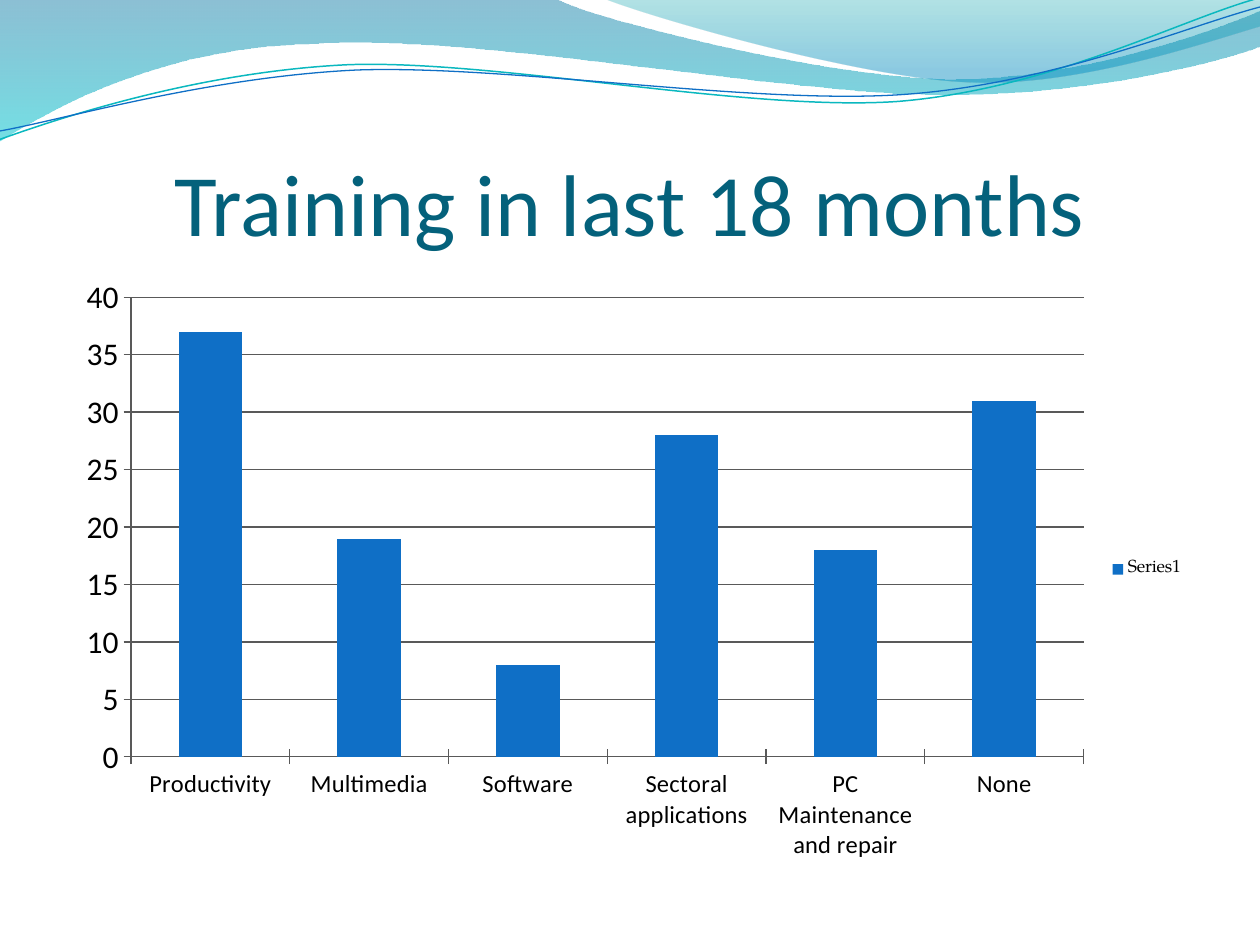
"""Build a slide with a column chart of training in the last 18 months."""
from lxml import etree
from pptx import Presentation
from pptx.chart.data import CategoryChartData
from pptx.dml.color import RGBColor
from pptx.enum.chart import XL_CHART_TYPE, XL_LEGEND_POSITION, XL_TICK_MARK
from pptx.enum.text import MSO_ANCHOR, PP_ALIGN
from pptx.oxml import parse_xml
from pptx.oxml.ns import nsdecls, qn
from pptx.util import Pt

COLUMN = XL_CHART_TYPE.COLUMN_CLUSTERED
LEGEND_RIGHT = XL_LEGEND_POSITION.RIGHT
TICK_CROSS = XL_TICK_MARK.CROSS
BOTTOM = MSO_ANCHOR.BOTTOM
CENTER = PP_ALIGN.CENTER

COLORS = {
    "title": "04617B", "text": "000000", "bar": "0F6FC6", "axis": "595959",
    "deep": "0074A1", "aqua": "00C6CF", "teal": "00A1A9", "sky": "008BBF",
    "teal line": "0AB8BF", "blue line": "0F6FC6",
}
BODY_FONT, CHART_FONT = "Calibri", "TeX Gyre Pagella"

TITLE = "Training in last 18 months"
TRAINING = [
    ("Productivity", 37), ("Multimedia", 19), ("Software", 8),
    ("Sectoral applications", 28), ("PC Maintenance and repair", 18), ("None", 31),
]
PLOT_LAYOUT = {"x": 0.06, "y": 0.05, "w": 0.84, "h": 0.76}

BANDS = [
    {"start": (0, 0),
     "segments": [[(317, -1)],
                  [(343, 12), (478, 45), (546, 45)], [(614, 45), (690, 19), (720, 6)],
                  [(721, 26)],
                  [(708, 32), (626, 55), (537, 54)], [(448, 54), (275, 20), (185, 24.5)],
                  [(93, 26), (33, 60), (-1, 81)]],
     "stops": [(0, "deep", 45), (1, "aqua", 55)]},
    {"start": (345, -1),
     "segments": [[(366, 8), (491, 45), (554, 47)], [(616, 50), (692, 23), (720, 15)],
                  [(720, 0)]],
     "stops": [(0, "teal", 30), (0.8, "sky", 45)]},
]
WAVES = [
    {"start": (-1, 80),
     "segments": [[(35, 67), (114, 41), (199, 37)], [(284, 34), (427, 64), (513, 58)],
                  [(600, 51), (675, 11), (719, -1)]],
     "color": "teal line", "width": 0.85},
    {"start": (-1, 75),
     "segments": [[(34, 69), (118, 44), (204, 40)], [(290, 37), (430, 60), (516, 54)],
                  [(602, 48), (678, 15), (720, 4)]],
     "color": "blue line", "width": 0.75},
]


def rgb(name):
    return RGBColor.from_string(COLORS[name])


def add_outline(slide, start, segments, close):
    points = [(Pt(x), Pt(y)) for segment in segments for x, y in segment]
    builder = slide.shapes.build_freeform(Pt(start[0]), Pt(start[1]))
    builder.add_line_segments(points, close=close)
    shape = builder.convert_to_shape()
    shape.shadow.inherit = False
    lines = iter(list(shape.element.iter(qn("a:lnTo"))))
    for segment in segments:
        steps = [next(lines) for point in segment]
        if len(steps) == 3:
            curve = etree.Element(qn("a:cubicBezTo"))
            steps[0].addprevious(curve)
            for step in steps:
                curve.append(step[0])
                step.getparent().remove(step)
    return shape


def add_band(slide, start, segments, stops):
    shape = add_outline(slide, start, segments, True)
    shape.line.fill.background()
    shape.fill.gradient()
    shape.fill.gradient_angle = 270
    for stop, (position, color, opacity) in zip(shape.fill.gradient_stops, stops):
        stop.position = position
        stop.color.rgb = rgb(color)
    colors = shape.element.spPr.iter(qn("a:srgbClr"))
    for element, (position, color, opacity) in zip(list(colors), stops):
        etree.SubElement(element, qn("a:alpha"), val=str(opacity * 1000))


def add_wave(slide, start, segments, color, width):
    shape = add_outline(slide, start, segments, False)
    shape.fill.background()
    shape.line.color.rgb = rgb(color)
    shape.line.width = Pt(width)


def format_font(font, size, name, color="text"):
    font.size, font.name, font.color.rgb = Pt(size), name, rgb(color)


def add_text(slide, text, *, left, top, width, height, size, font, color):
    frame = slide.shapes.add_textbox(Pt(left), Pt(top), Pt(width), Pt(height)).text_frame
    frame.word_wrap = True
    frame.vertical_anchor = BOTTOM
    frame.margin_left = frame.margin_right = frame.margin_bottom = 0
    frame.margin_top = Pt(3.6)
    paragraph = frame.paragraphs[0]
    paragraph.alignment = CENTER
    run = paragraph.add_run()
    run.text = text
    format_font(run.font, size, font, color)


def format_axis(axis, size):
    axis.major_tick_mark = TICK_CROSS
    axis.format.line.color.rgb = rgb("axis")
    format_font(axis.tick_labels.font, size, BODY_FONT)


def add_training_chart(slide):
    data = CategoryChartData()
    data.categories = [name for name, value in TRAINING]
    data.add_series("", [value for name, value in TRAINING])
    chart = slide.shapes.add_chart(COLUMN, Pt(36), Pt(152.6), Pt(648), Pt(345.6), data).chart
    chart.has_title = False
    format_font(chart.font, 10, CHART_FONT)
    format_axis(chart.category_axis, 14)
    format_axis(chart.value_axis, 18)
    chart.value_axis.has_major_gridlines = True
    chart.value_axis.major_gridlines.format.line.color.rgb = rgb("axis")
    chart.has_legend = True
    chart.legend.position = LEGEND_RIGHT
    chart.legend.include_in_layout = False
    plot = chart.plots[0]
    plot.gap_width = 150
    plot.vary_by_categories = False
    series = plot.series[0]
    series.format.fill.solid()
    series.format.fill.fore_color.rgb = rgb("bar")
    name = chart.element.find(".//" + qn("c:ser") + "/" + qn("c:tx"))
    if name is not None:
        name.getparent().remove(name)

    plot_area = chart.element.find(".//" + qn("c:plotArea"))
    for layout in plot_area.findall(qn("c:layout")):
        plot_area.remove(layout)
    sizes = "".join(f'<c:{key} val="{value}"/>' for key, value in PLOT_LAYOUT.items())
    plot_area.insert(0, parse_xml(
        f'<c:layout {nsdecls("c")}><c:manualLayout><c:layoutTarget val="inner"/>'
        f'<c:xMode val="edge"/><c:yMode val="edge"/>{sizes}</c:manualLayout></c:layout>'))


def main():
    presentation = Presentation()
    presentation.slide_width, presentation.slide_height = Pt(720), Pt(540)
    slide = presentation.slides.add_slide(presentation.slide_layouts[6])
    for band in BANDS:
        add_band(slide, **band)
    for wave in WAVES:
        add_wave(slide, **wave)
    add_text(slide, TITLE, left=36, top=55.4, width=648, height=90,
             size=50, font=BODY_FONT, color="title")
    add_training_chart(slide)
    presentation.save("out.pptx")


if __name__ == "__main__":
    main()
